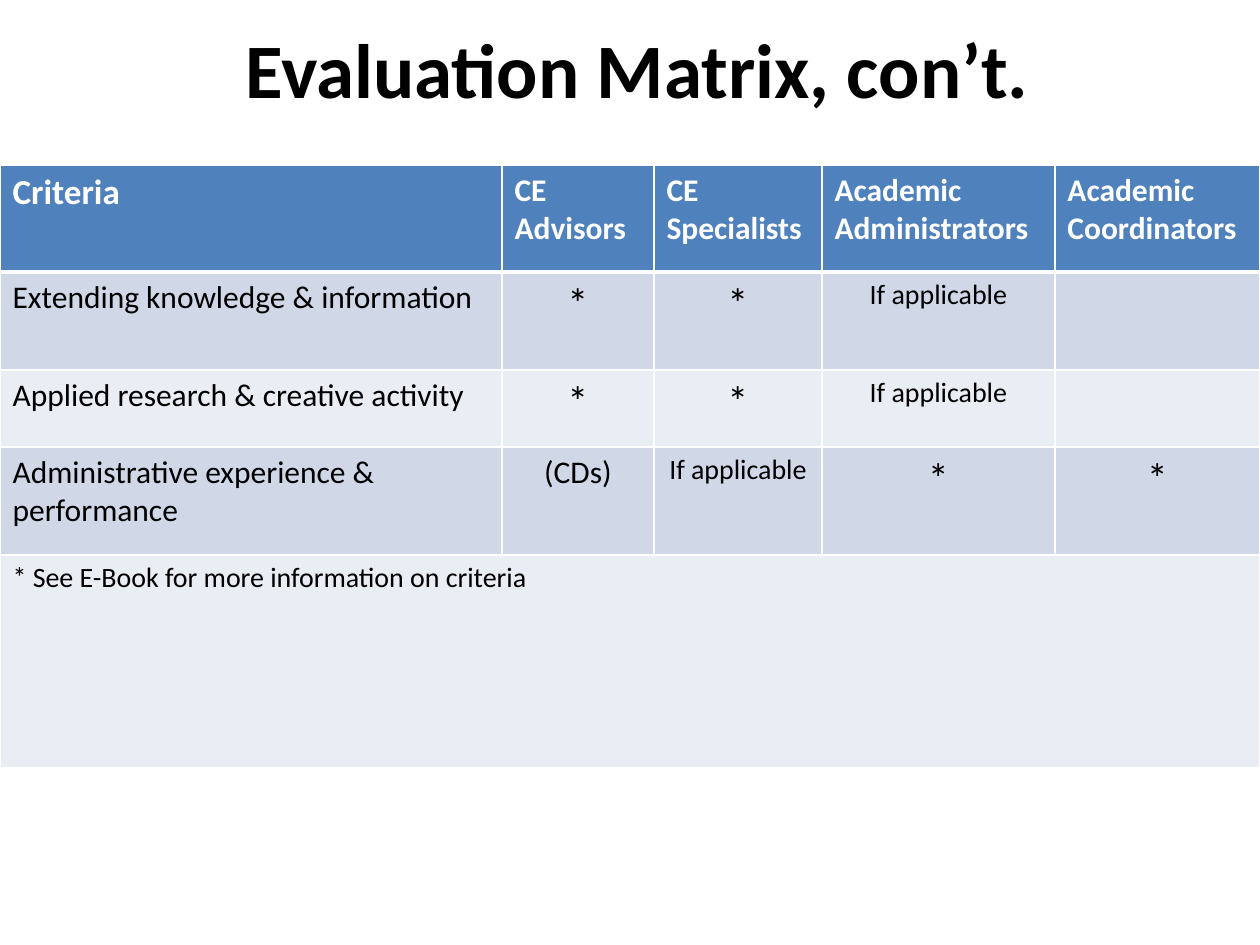
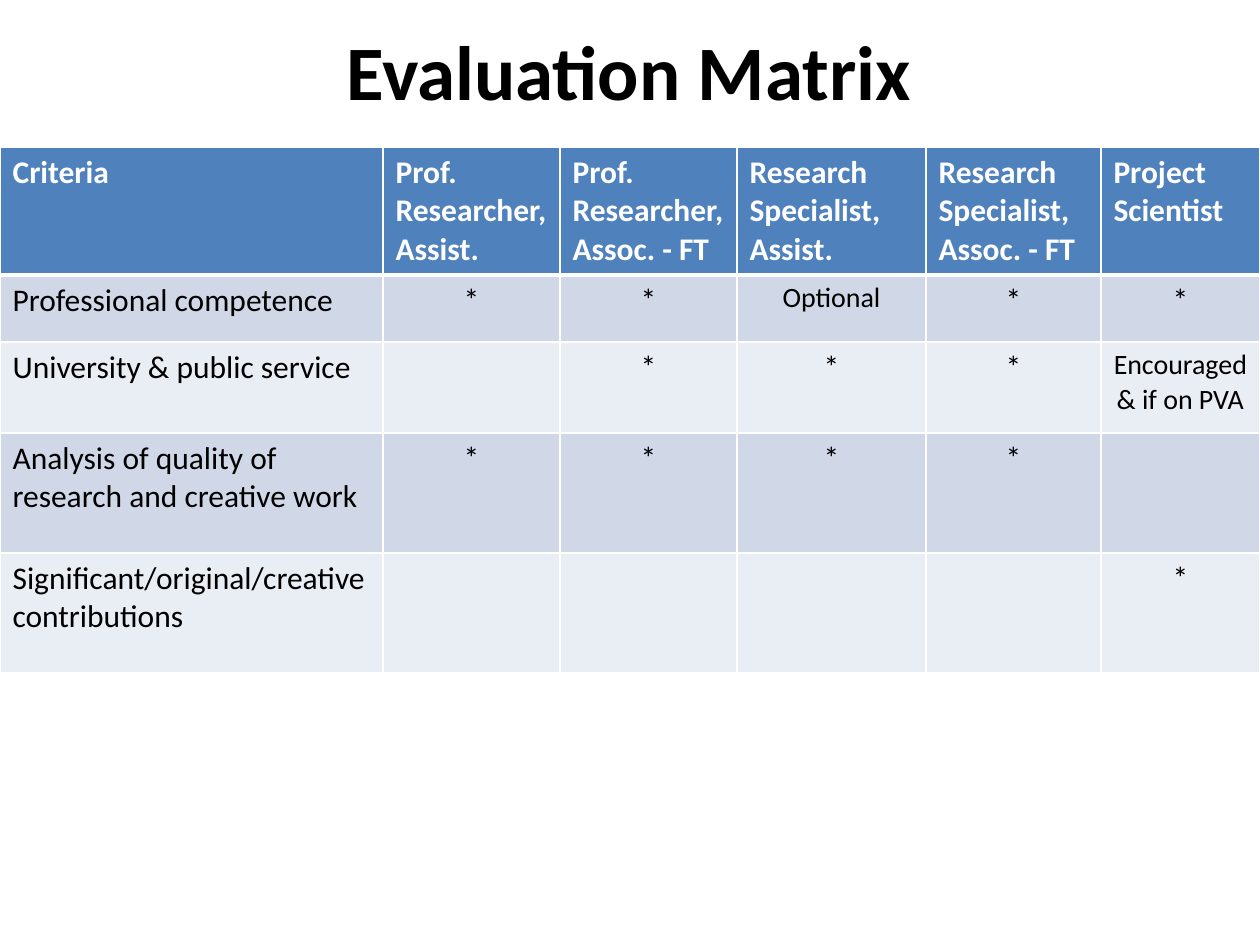
"""Build the two evaluation matrix slides."""
from lxml import etree
from pptx import Presentation
from pptx.dml.color import RGBColor
from pptx.enum.text import MSO_ANCHOR, PP_ALIGN
from pptx.oxml.ns import qn
from pptx.util import Emu, Pt

PX = 914400 / 126
WHITE, BLACK, HEADER = "FFFFFF", "000000", "4F81BD"
BANDS = ["E9EDF4", "D0D8E8"]
FOOTNOTE = "* See E-Book for more information on criteria"
NOTE_SIZES = dict.fromkeys(["If applicable", "Optional", "Encouraged & if on PVA", FOOTNOTE], 16)

MATRICES = [
    {
        "title": "Evaluation Matrix, con’t.",
        "title_box": (233, 15, 918, 106),
        "top": 165,
        "columns": [502, 152, 168, 233, 205],
        "rows": [107, 98, 77, 108, 213],
        "sizes": {"Criteria": 20, "*": 24},
        "cells": [
            ["Criteria", "CE Advisors", "CE Specialists", "Academic Administrators", "Academic Coordinators"],
            ["Extending knowledge & information", "*", "*", "If applicable", ""],
            ["Applied research & creative activity", "*", "*", "If applicable", ""],
            ["Administrative experience & performance", "(CDs)", "If applicable", "*", "*"],
            [FOOTNOTE],
        ],
    },
    {
        "title": "Evaluation Matrix",
        "title_box": (334, 17, 888, 106),
        "top": 147,
        "columns": [383, 177, 177, 189, 175, 159],
        "rows": [125, 67, 91, 120, 120],
        "sizes": {},
        "cells": [
            ["Criteria", "Prof. Researcher, Assist.", "Prof. Researcher, Assoc. - FT",
             "Research Specialist, Assist.", "Research Specialist, Assoc. - FT", "Project Scientist"],
            ["Professional competence", "*", "*", "Optional", "*", "*"],
            ["University & public service", "", "*", "*", "*", "Encouraged & if on PVA"],
            ["Analysis of quality of research and creative work", "*", "*", "*", "*", ""],
            ["Significant/original/creative contributions", "", "", "", "", "*"],
        ],
    },
]


def color(code):
    return RGBColor.from_string(code)


def write(frame, text, size, code, bold, align):
    paragraph = frame.paragraphs[0]
    paragraph.alignment = align
    if text:
        paragraph.add_run().text = text
    for font in [paragraph.font] + [run.font for run in paragraph.runs]:
        for name, value in {"name": "Calibri", "size": Pt(size), "bold": bold}.items():
            setattr(font, name, value)
        font.color.rgb = color(code)


deck = Presentation()
deck.slide_width, deck.slide_height = Emu(round(1260 * PX)), Emu(round(945 * PX))

for matrix in MATRICES:
    slide = deck.slides.add_slide(deck.slide_layouts[5])
    title = slide.shapes.title
    for name, length in zip(("left", "top", "width", "height"), matrix["title_box"]):
        setattr(title, name, Emu(round(length * PX)))
    for name, value in {"word_wrap": True, "vertical_anchor": MSO_ANCHOR.TOP}.items():
        setattr(title.text_frame, name, value)
    write(title.text_frame, matrix["title"], 44, BLACK, True, PP_ALIGN.LEFT)

    columns, rows = matrix["columns"], matrix["rows"]
    box = [Emu(round(n * PX)) for n in (0, matrix["top"], sum(columns), sum(rows))]
    grid = slide.shapes.add_table(len(rows), len(columns), *box).table
    for column, width in zip(grid.columns, columns):
        column.width = Emu(round(width * PX))
    for row, height in zip(grid.rows, rows):
        row.height = Emu(round(height * PX))

    sizes = NOTE_SIZES | matrix["sizes"]
    for r, texts in enumerate(matrix["cells"]):
        if len(texts) == 1:
            grid.cell(r, 0).merge(grid.cell(r, len(columns) - 1))
        for c in range(len(columns)):
            cell = grid.cell(r, c)
            cell.fill.solid()
            cell.fill.fore_color.rgb = color(BANDS[r % 2] if r else HEADER)
            edges = {"lnL": 1, "lnR": 1, "lnT": 3 if r == 1 else 1, "lnB": 1 if r else 3}
            for position, (edge, weight) in enumerate(edges.items()):
                line = etree.Element(qn(f"a:{edge}"), w=str(Pt(weight)))
                fill = etree.SubElement(line, qn("a:solidFill"))
                etree.SubElement(fill, qn("a:srgbClr"), val=WHITE)
                cell._tc.get_or_add_tcPr().insert(position, line)
            if c < len(texts):
                align = PP_ALIGN.CENTER if r and c else PP_ALIGN.LEFT
                write(cell.text_frame, texts[c], sizes.get(texts[c], 18),
                      BLACK if r else WHITE, r == 0, align)

deck.save("out.pptx")
